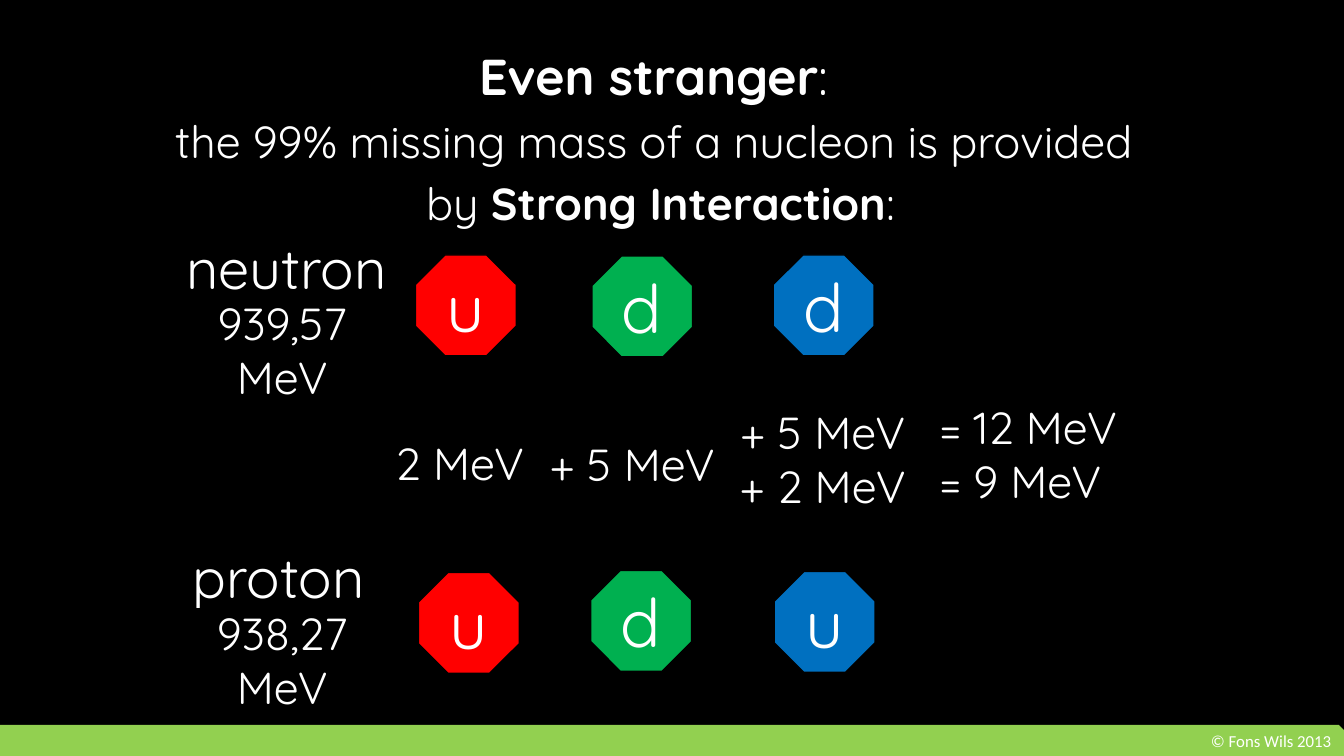
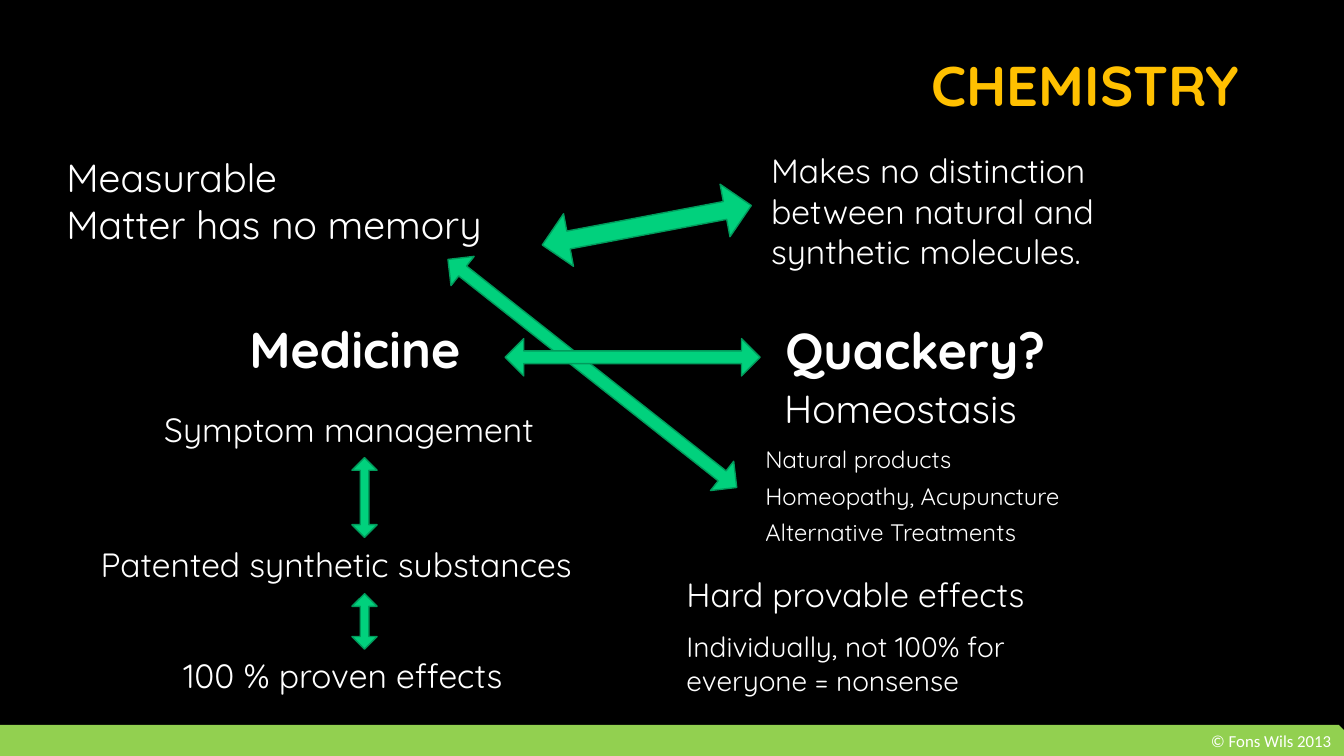
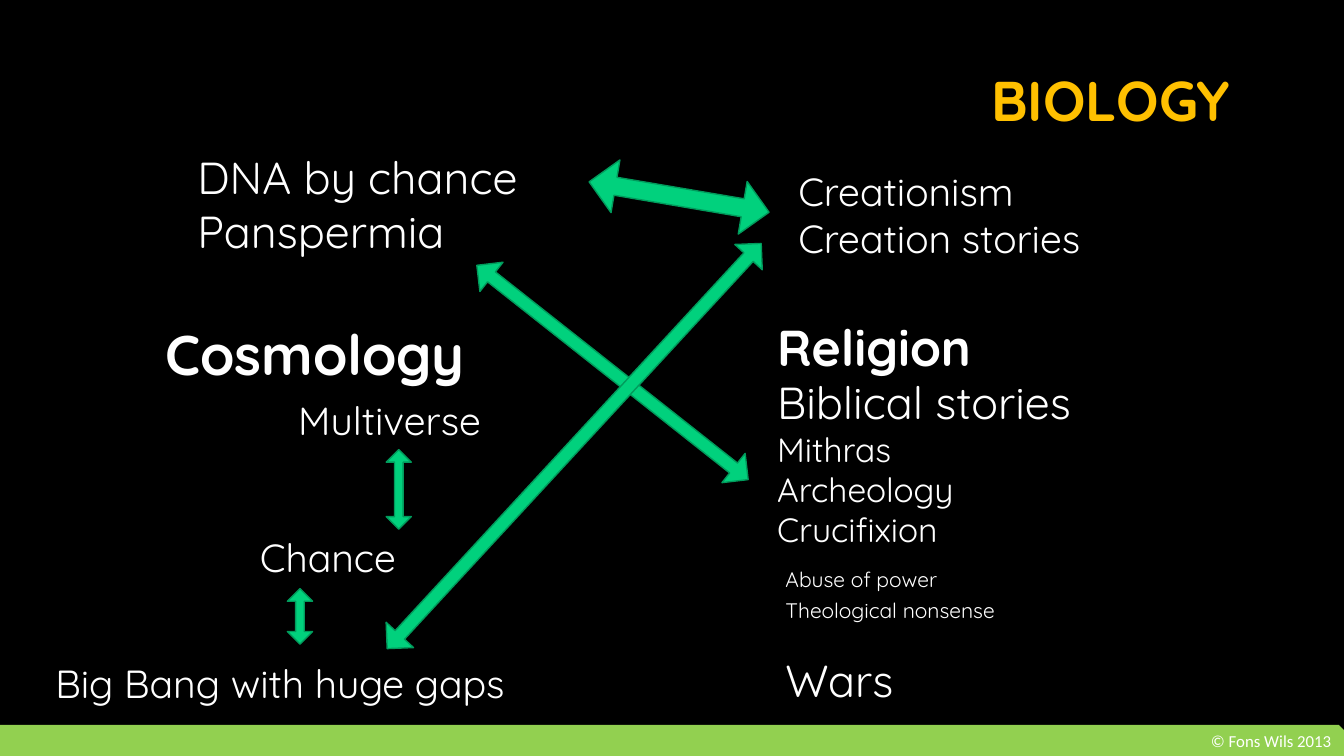
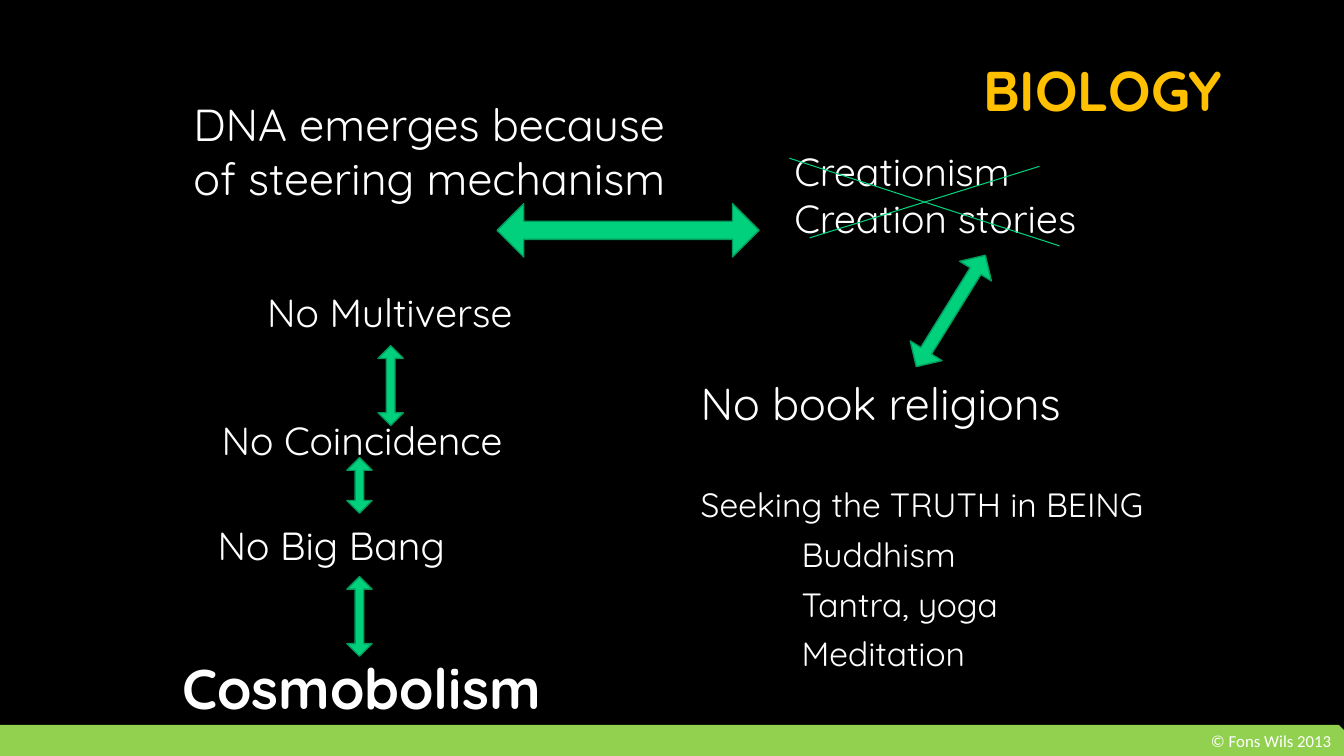
from dataclasses import dataclass

from lxml.etree import SubElement
from pptx import Presentation
from pptx.dml.color import RGBColor as RGB
from pptx.enum.shapes import MSO_CONNECTOR as CONN, MSO_SHAPE as SHAPE
from pptx.enum.text import MSO_ANCHOR as ANCHOR, MSO_AUTO_SIZE as FIT, PP_ALIGN as ALIGN
from pptx.oxml.ns import qn
from pptx.util import Inches, Pt


@dataclass(frozen=True)
class Theme:
    font: str = "Quicksand"
    footer_font: str = "Calibri"
    black: RGB = RGB(0, 0, 0)
    white: RGB = RGB(255, 255, 255)
    gold: RGB = RGB(0xFF, 0xC0, 0)
    lime: RGB = RGB(0x92, 0xD0, 0x50)
    mint: RGB = RGB(0x01, 0xD1, 0x7D)
    mint_edge: RGB = RGB(0x01, 0x9B, 0x5C)
    red: RGB = RGB(0xFF, 0, 0)
    green: RGB = RGB(0, 0xB0, 0x50)
    blue: RGB = RGB(0, 0x70, 0xC0)
    quark: int = 48
    title: int = 40
    heading: int = 36
    large: int = 32
    medium: int = 28
    normal: int = 24
    small: int = 20
    fine: int = 17
    tiny: int = 15
    footer: int = 12


T = Theme()


def write(tf, text, size=T.normal, bold=False, color=T.white, font=T.font,
          align=ALIGN.LEFT, anchor=ANCHOR.TOP, spacing=None, gap=0):
    tf.word_wrap = True
    tf.auto_size = FIT.NONE
    tf.vertical_anchor = anchor
    for i, runs in enumerate([text] if isinstance(text, str) else text):
        p = tf.add_paragraph() if i else tf.paragraphs[0]
        p.alignment = align
        p.space_before = Pt(gap if i else 0)
        if spacing:
            p.line_spacing = spacing
        for words, fmt in [(runs, {})] if isinstance(runs, str) else runs:
            r = p.add_run()
            r.text = words
            r.font.name = font
            r.font.size = Pt(fmt.get("size", size))
            r.font.bold = fmt.get("bold", bold)
            r.font.color.rgb = color


class Deck:
    def __init__(self):
        self.prs = Presentation()
        self.prs.slide_width, self.prs.slide_height = Inches(13.33), Inches(7.5)
        fill = self.prs.slide_master.background.fill
        fill.solid()
        fill.fore_color.rgb = T.black
        self.slide = None

    def new_slide(self):
        self.slide = self.prs.slides.add_slide(self.prs.slide_layouts[1])
        band = self.shape(SHAPE.SNIP_1_RECTANGLE, 0, 7.19, 13.33, 0.31, T.lime)
        write(band.text_frame, "© Fons Wils 2013", size=T.footer, font=T.footer_font,
              align=ALIGN.RIGHT, anchor=ANCHOR.MIDDLE, spacing=0.9)

    def end_slide(self):
        for sp in list(self.slide.placeholders):
            if not sp.text_frame.text:
                sp.element.getparent().remove(sp.element)

    def place(self, sp, x, y, w, h):
        sp.left, sp.top, sp.width, sp.height = map(Inches, (x, y, w, h))
        return sp.text_frame

    def title(self, text, x, y):
        tf = self.place(self.slide.shapes.title, x, y, 5.98, 1.09)
        write(tf, text, size=T.title, bold=True, color=T.gold,
              align=ALIGN.RIGHT, anchor=ANCHOR.MIDDLE, spacing=0.9)

    def body(self, text, x, y, w, h, indents=(), spacing=0.9, **fmt):
        tf = self.place(self.slide.placeholders[1], x, y, w, h)
        write(tf, text, spacing=spacing, gap=9.5, **fmt)
        for i, p in enumerate(tf.paragraphs):
            pPr = p._p.get_or_add_pPr()
            pPr.set("marL", str(Inches(indents[i] if indents else 0)))
            pPr.set("indent", "0")
            SubElement(pPr, qn("a:buNone"))

    def text(self, text, x, y, w, h, **fmt):
        sp = self.slide.shapes.add_textbox(*map(Inches, (x, y, w, h)))
        write(sp.text_frame, text, **fmt)

    def shape(self, kind, x, y, w, h, fill, line=None):
        sp = self.slide.shapes.add_shape(kind, *map(Inches, (x, y, w, h)))
        sp.shadow.inherit = False
        sp.fill.solid()
        sp.fill.fore_color.rgb = fill
        if line is None:
            sp.line.fill.background()
        else:
            sp.line.color.rgb = line
            sp.line.width = Pt(1)
        return sp

    def quark(self, letter, x, y, color):
        sp = self.shape(SHAPE.OCTAGON, x, y, 1, 1, color, T.black)
        write(sp.text_frame, letter, size=T.quark, align=ALIGN.CENTER, anchor=ANCHOR.MIDDLE)

    def label(self, text, x, y, w, h, size=T.large, align=ALIGN.CENTER):
        sp = self.shape(SHAPE.RECTANGLE, x, y, w, h, T.black, T.black)
        write(sp.text_frame, text, size=size, align=align, anchor=ANCHOR.MIDDLE)

    def arrow(self, x, y, w, h=0.37, angle=0):
        sp = self.shape(SHAPE.LEFT_RIGHT_ARROW, x, y, w, h, T.mint, T.mint_edge)
        sp.adjustments[0], sp.adjustments[1] = 0.34, 0.5
        sp.rotation = angle

    def upright_arrow(self, x, y, length):
        self.arrow(x, y, length, 0.25, 90)

    def line(self, x1, y1, x2, y2):
        cn = self.slide.shapes.add_connector(CONN.STRAIGHT, *map(Inches, (x1, y1, x2, y2)))
        cn.line.color.rgb = T.mint
        cn.line.width = Pt(0.75)
        SubElement(cn._element.spPr, qn("a:effectLst"))


def nucleon_slide(d):
    d.new_slide()
    bold = {"bold": True}
    d.body([[("Even stranger", {"size": T.heading, "bold": True}), (": ", {"size": T.heading})],
            "the 99% missing mass of a nucleon is provided ",
            [("by ", {}), ("Strong Interaction", bold), (":", {})]],
           0.84, 0.47, 11.42, 6.41, size=T.large, align=ALIGN.CENTER)
    for letter, x, y, color in (
            ("u", 4.12, 2.53, T.red), ("d", 5.87, 2.54, T.green), ("d", 7.67, 2.53, T.blue),
            ("u", 4.15, 5.68, T.red), ("d", 5.86, 5.66, T.green), ("u", 7.68, 5.67, T.blue)):
        d.quark(letter, x, y, color)
    for name, mass, y, w in (("neutron", "939,57 MeV", 2.18, 2.34),
                             ("proton", "938,27 MeV", 5.25, 2.19)):
        d.label(name, 1.67, y, w, 0.94, size=T.title)
        d.label(mass, 1.94, y + 0.79, 1.72, 1)
    d.label("2 MeV", 3.7, 4.09, 1.72, 1)
    d.label("+ 5 MeV", 5.33, 4.25, 1.88, 0.7)
    d.label(["+ 5 MeV", "+ 2 MeV"], 7.22, 4.01, 1.88, 1.08)
    d.label(["= 12 MeV", "= 9 MeV"], 9.22, 3.13, 2.24, 2.74, align=ALIGN.LEFT)
    d.end_slide()


def chemistry_slide(d):
    d.new_slide()
    d.title("CHEMISTRY", 6.41, 0.33)
    d.body(["Natural products", "Homeopathy, Acupuncture", "Alternative Treatments"],
           7.49, 4.42, 3.62, 1.18, size=T.fine, spacing=0.8)
    d.text(["Measurable", "Matter has no memory"], 0.56, 1.47, 4.88, 1.04, size=T.medium)
    d.text("Makes no distinction between natural and synthetic molecules.", 7.55, 1.44, 3.78, 1.31)
    d.text("Medicine", 1.59, 3.11, 3.86, 0.71, size=T.heading, bold=True, align=ALIGN.CENTER)
    d.text("Quackery?", 7.69, 3.12, 3.23, 0.71, size=T.heading, bold=True)
    d.text("Homeostasis", 7.68, 3.76, 2.6, 0.57, size=T.medium)
    d.text("Symptom management", 1.53, 4.01, 4.17, 0.5)
    d.text("Patented synthetic substances", 0.9, 5.35, 5.43, 0.5)
    d.text("100 % proven effects", 1.72, 6.45, 4.57, 0.5)
    d.text("Hard provable effects", 6.71, 5.64, 4.96, 0.5)
    d.text("Individually, not 100% for everyone = nonsense", 6.71, 6.2, 4.29, 0.77, size=T.small)
    d.arrow(5.36, 1.97, 2.11, 0.53, angle=349.3)
    d.upright_arrow(3.22, 4.81, 0.79)
    d.upright_arrow(3.34, 6.04, 0.55)
    d.arrow(4.05, 3.52, 3.65, angle=38.3)
    d.arrow(5.01, 3.36, 2.53)
    d.end_slide()


def cosmology_slide(d):
    d.new_slide()
    d.title("BIOLOGY", 6.32, 0.48)
    d.body(["Abuse of power", "Theological nonsense"], 7.69, 5.64, 3.62, 0.63,
           size=T.tiny, spacing=0.7)
    d.text(["DNA by chance", "Panspermia"], 1.86, 1.44, 3.95, 1.72, size=T.large)
    d.text(["Creationism", "Creation stories"], 7.82, 1.61, 4.35, 1.04, size=T.medium)
    d.text("Cosmology", 1.54, 3.12, 3.78, 0.77, size=T.title, bold=True)
    d.text("Religion", 7.61, 3.09, 3.23, 0.71, size=T.heading, bold=True)
    d.text([[("Biblical stories", {"size": T.large})], "Mithras", "Archeology", "Crucifixion"],
           7.61, 3.67, 4.29, 1.85)
    d.text("Multiverse", 2.86, 3.88, 4.17, 0.57, size=T.medium)
    d.text("Chance", 2.48, 5.24, 3.78, 0.57, size=T.medium)
    d.text("Big Bang with huge gaps", 0.45, 6.49, 6.02, 0.57, size=T.medium)
    d.text("Wars", 7.69, 6.43, 2.6, 0.64, size=T.large)
    d.arrow(5.83, 1.69, 1.81, 0.53, angle=9.6)
    d.upright_arrow(3.56, 4.73, 0.79)
    d.upright_arrow(2.7, 5.99, 0.55)
    d.arrow(4.36, 3.51, 3.43, angle=38.3)
    d.arrow(2.96, 4.24, 5.47, angle=312.7)
    d.end_slide()


def cosmobolism_slide(d):
    d.new_slide()
    d.title("BIOLOGY", 6.24, 0.38)
    d.body(["Seeking the TRUTH in BEING", "Buddhism", "Tantra, yoga", "Meditation"],
           6.85, 4.8, 5.17, 2.13, indents=(0, 1, 1, 1))
    d.text("DNA emerges because of steering mechanism", 1.82, 0.91, 5.2, 2.26, size=T.large)
    d.text(["Creationism", "Creation stories"], 7.78, 1.41, 4.24, 1.04, size=T.medium)
    d.text("No book religions", 6.85, 3.68, 5.51, 0.64, size=T.large)
    d.text("No Multiverse", 1.78, 2.81, 4.17, 0.57, size=T.medium, align=ALIGN.CENTER)
    d.text("No Coincidence", 2.1, 4.08, 3.78, 0.57, size=T.medium)
    d.text("No Big Bang", 2.06, 5.12, 4.57, 0.57, size=T.medium)
    d.text("Cosmobolism", 1.71, 6.43, 4.33, 0.77, size=T.title, bold=True)
    d.arrow(4.93, 2.02, 2.6, 0.53)
    d.upright_arrow(3.48, 3.7, 0.79)
    d.upright_arrow(3.29, 4.69, 0.55)
    d.upright_arrow(3.17, 5.99, 0.79)
    d.arrow(8.78, 2.9, 1.3, angle=121.8)
    d.line(7.83, 1.57, 10.51, 2.44)
    d.line(8.03, 2.36, 10.31, 1.65)
    d.end_slide()


def main():
    d = Deck()
    for build in (nucleon_slide, chemistry_slide, cosmology_slide, cosmobolism_slide):
        build(d)
    d.prs.save("out.pptx")


if __name__ == "__main__":
    main()
